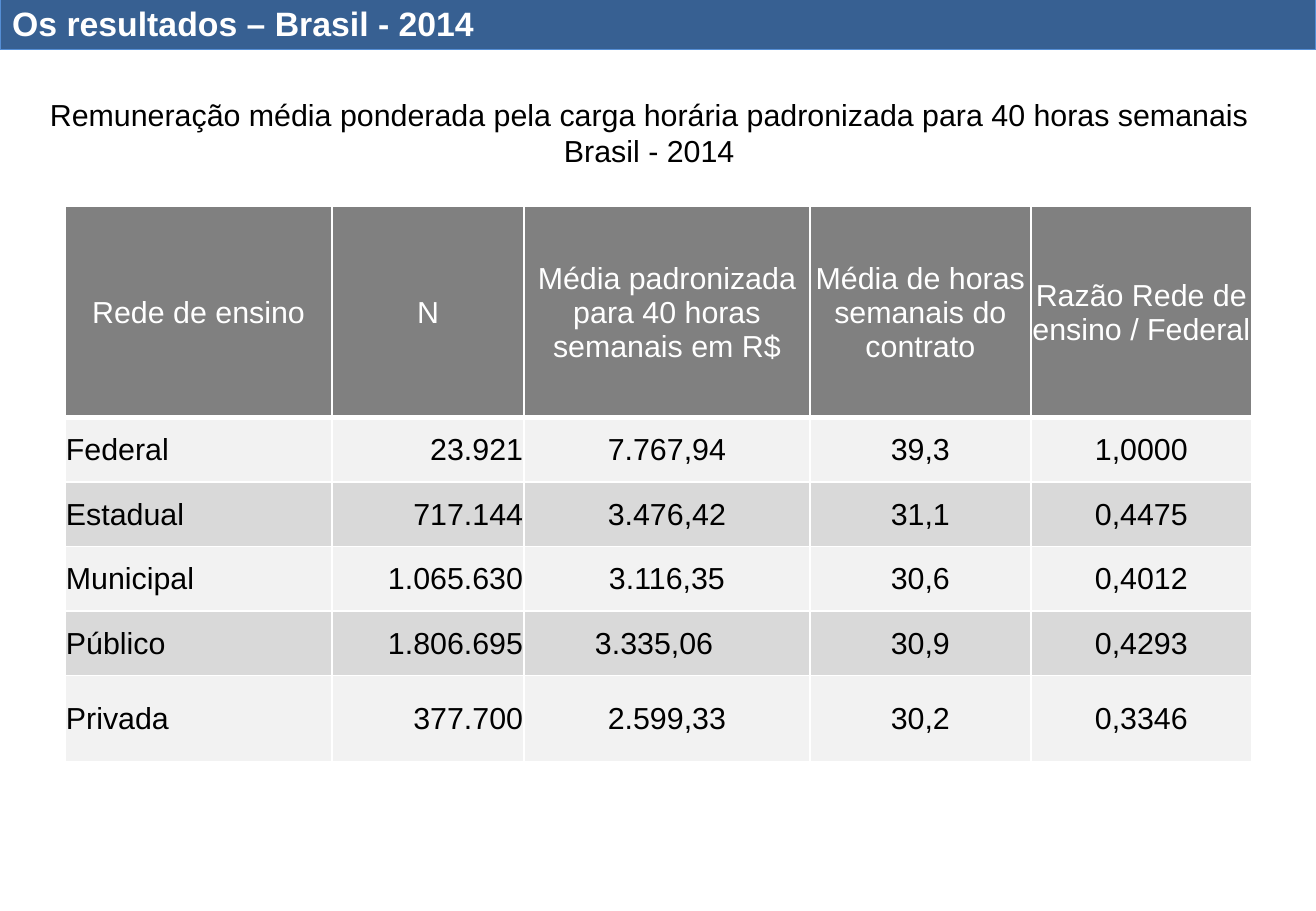
from pptx import Presentation
from pptx.dml.color import RGBColor as RGB
from pptx.enum.text import MSO_ANCHOR as Anchor, PP_ALIGN as Align
from pptx.oxml.ns import qn
from pptx.util import Pt
from lxml.etree import SubElement as Sub

TITLE = "Os resultados – Brasil - 2014"
CAPTION = ("Remuneração média ponderada pela carga horária padronizada "
           "para 40 horas semanais Brasil - 2014")
ROWS = [
    ("Rede de ensino", "N", "Média padronizada para 40 horas semanais em R$",
     "Média de horas semanais do contrato", "Razão Rede de ensino / Federal"),
    ("Federal", "23.921", "7.767,94", "39,3", "1,0000"),
    ("Estadual", "717.144", "3.476,42", "31,1", "0,4475"),
    ("Municipal", "1.065.630", "3.116,35", "30,6", "0,4012"),
    ("Público", "1.806.695", "3.335,06", "30,9", "0,4293"),
    ("Privada", "377.700", "2.599,33", "30,2", "0,3346"),
]
WIDTHS = [158.4, 113.7, 169.4, 131, 131]
HEIGHTS = [125.2, 38.2, 38.2, 38.2, 38.2, 51.2]
ALIGNS = [Align.LEFT, Align.RIGHT, Align.CENTER, Align.CENTER, Align.CENTER]
SHIFTED = (4, 2)  # the public average sits left of its column's centre
COLORS = {"banner": "376092", "edge": "558ED5", "head": "808080",
          "light": "F2F2F2", "dark": "D9D9D9", "white": "FFFFFF",
          "black": "000000"}


def color(name):
    return RGB.from_string(COLORS[name])


def place(shape, left, top, width, height):
    shape.left, shape.top = Pt(left), Pt(top)
    shape.width, shape.height = Pt(width), Pt(height)


def write(frame, text, size, tint, align, bold=False):
    frame.text = text
    frame.word_wrap = True
    para = frame.paragraphs[0]
    para.alignment = align
    font = para.runs[0].font
    font.name, font.size, font.bold = "Arial", Pt(size), bold
    font.color.rgb = color(tint)


def border(cell, row):
    """Draw white cell edges, thicker between header and body."""
    props = cell._tc.get_or_add_tcPr()
    thick = {"T": row == 1, "B": row == 0}
    for side in "LRTB":
        width = Pt(3 if thick.get(side) else 1)
        line = Sub(props, qn(f"a:ln{side}"), w=str(width))
        Sub(Sub(line, qn("a:solidFill")), qn("a:srgbClr"), val=COLORS["white"])


def add_grid(slide):
    frame = slide.shapes.add_table(
        len(ROWS), len(WIDTHS), Pt(38.5), Pt(122.4),
        Pt(sum(WIDTHS)), Pt(sum(HEIGHTS)))
    table = frame.table
    for col, width in zip(table.columns, WIDTHS):
        col.width = Pt(width)
    for row, height in zip(table.rows, HEIGHTS):
        row.height = Pt(height)
    for r, texts in enumerate(ROWS):
        head = r == 0
        fill = "head" if head else "light" if r % 2 else "dark"
        for c, text in enumerate(texts):
            cell = table.cell(r, c)
            cell.margin_left = cell.margin_top = Pt(0.6)
            cell.margin_right = Pt(15.8 if (r, c) == SHIFTED else 0.6)
            cell.margin_bottom = Pt(0)
            cell.vertical_anchor = Anchor.MIDDLE
            border(cell, r)
            cell.fill.solid()
            cell.fill.fore_color.rgb = color(fill)
            write(cell.text_frame, text, 18, "white" if head else "black",
                  Align.CENTER if head else ALIGNS[c])


def main():
    deck = Presentation()
    deck.slide_width, deck.slide_height = Pt(780), Pt(540)
    slide = deck.slides.add_slide(deck.slide_layouts[5])

    title = slide.shapes.title
    place(title, 0, -2, 780, 31.5)
    title.fill.solid()
    title.fill.fore_color.rgb = color("banner")
    title.line.color.rgb = color("edge")
    title.line.width = Pt(0.75)
    title.text_frame.vertical_anchor = Anchor.MIDDLE
    write(title.text_frame, TITLE, 20, "white", Align.LEFT, True)

    add_grid(slide)

    note = slide.shapes.add_textbox(Pt(10.8), Pt(53.3), Pt(748), Pt(51))
    write(note.text_frame, CAPTION, 18, "black", Align.CENTER)
    deck.save("out.pptx")


if __name__ == "__main__":
    main()
